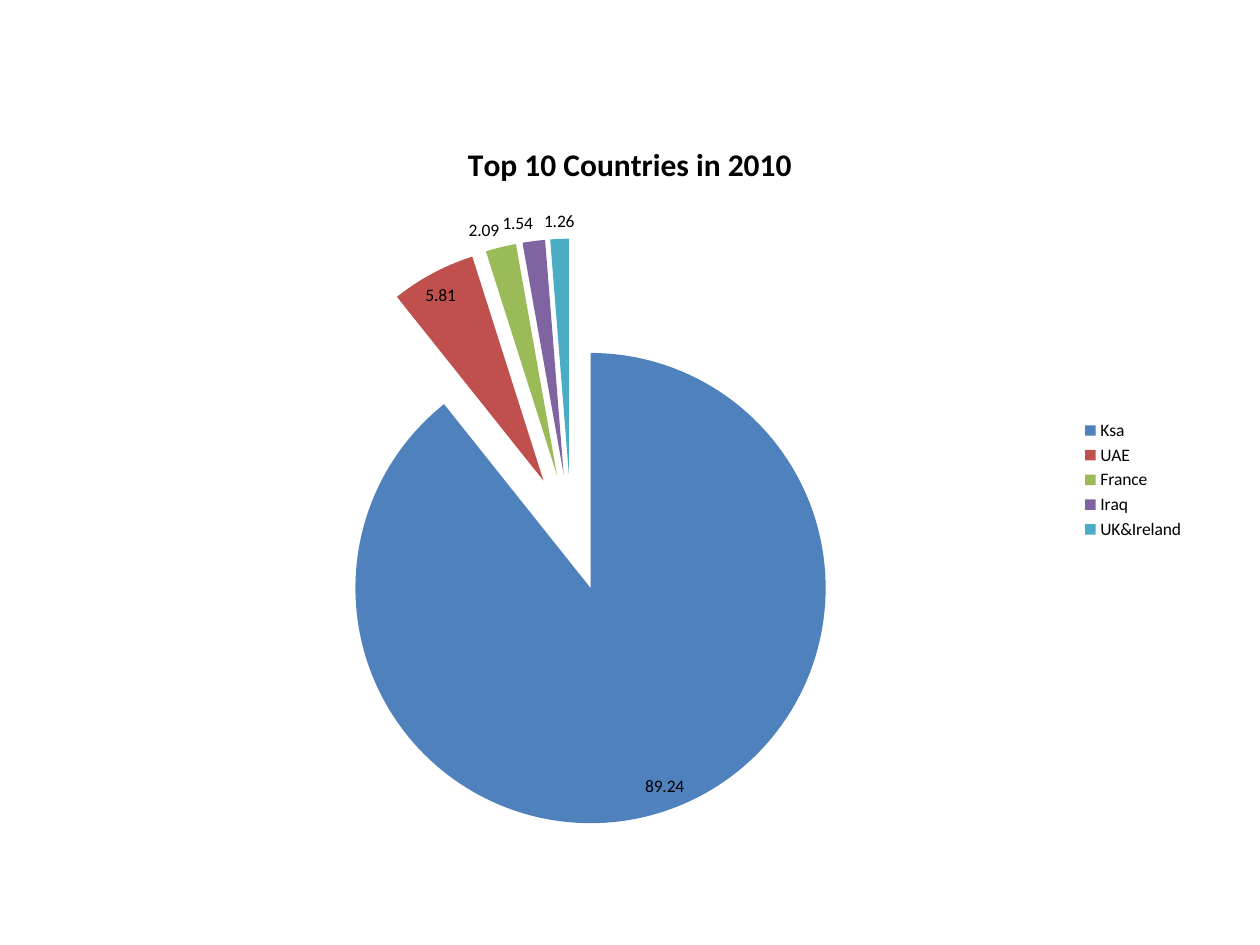
import pptx
import pptx.chart.data
import pptx.dml.color
import pptx.enum.chart
import pptx.util
from pptx.oxml.xmlchemy import OxmlElement

SCALE = 914400 // 126
FONT = "Calibri"
BLACK = "000000"
COUNTRIES = [
    ("Ksa", 89.24, "4F81BD"),
    ("UAE", 5.81, "C0504D"),
    ("France", 2.09, "9BBB59"),
    ("Iraq", 1.54, "8064A2"),
    ("UK&Ireland", 1.26, "4BACC6"),
]


def px(length):
    return pptx.util.Emu(length * SCALE)


def color(value):
    return pptx.dml.color.RGBColor.from_string(value)


def format_font(font, size, bold=False):
    font.name = FONT
    font.size = pptx.util.Pt(size)
    font.bold = bold
    font.color.rgb = color(BLACK)


def add_title(chart, text, **style):
    chart.has_title = True
    chart.chart_title.include_in_layout = False
    para = chart.chart_title.text_frame.paragraphs[0]
    span = para.add_run()
    span.text = text
    format_font(span.font, **style)


def add_legend(chart):
    chart.has_legend = True
    chart.legend.position = pptx.enum.chart.XL_LEGEND_POSITION.RIGHT
    chart.legend.include_in_layout = False
    format_font(chart.legend.font, size=10)


def add_labels(plot):
    plot.has_data_labels = True
    labels = plot.data_labels
    labels.show_value = True
    labels.show_percentage = False
    labels.position = pptx.enum.chart.XL_LABEL_POSITION.BEST_FIT
    format_font(labels.font, size=10)


def explode(series, percent):
    explosion = OxmlElement("c:explosion")
    explosion.set("val", str(percent))
    series._element.find("./{*}tx").addnext(explosion)


def add_pie(page, left, top, width, height):
    data = pptx.chart.data.CategoryChartData()
    data.categories = [name for name, share, fill in COUNTRIES]
    data.add_series("Series 1", [share for name, share, fill in COUNTRIES])
    chart = page.shapes.add_chart(
        pptx.enum.chart.XL_CHART_TYPE.PIE,
        px(left), px(top), px(width), px(height), data,
    ).chart
    format_font(chart.font, size=10)
    plot = chart.plots[0]
    plot.vary_by_categories = True
    series = plot.series[0]
    explode(series, 25)
    for index, (name, share, fill) in enumerate(COUNTRIES):
        point_fill = series.points[index].format.fill
        point_fill.solid()
        point_fill.fore_color.rgb = color(fill)
    add_labels(plot)
    return chart


def main():
    deck = pptx.Presentation()
    deck.slide_width = px(1260)
    deck.slide_height = px(945)
    page = deck.slides.add_slide(deck.slide_layouts[6])
    chart = add_pie(page, 63, 116, 1134, 728)
    add_title(chart, "Top 10 Countries in 2010", size=18, bold=True)
    add_legend(chart)
    deck.save("out.pptx")


if __name__ == "__main__":
    main()
